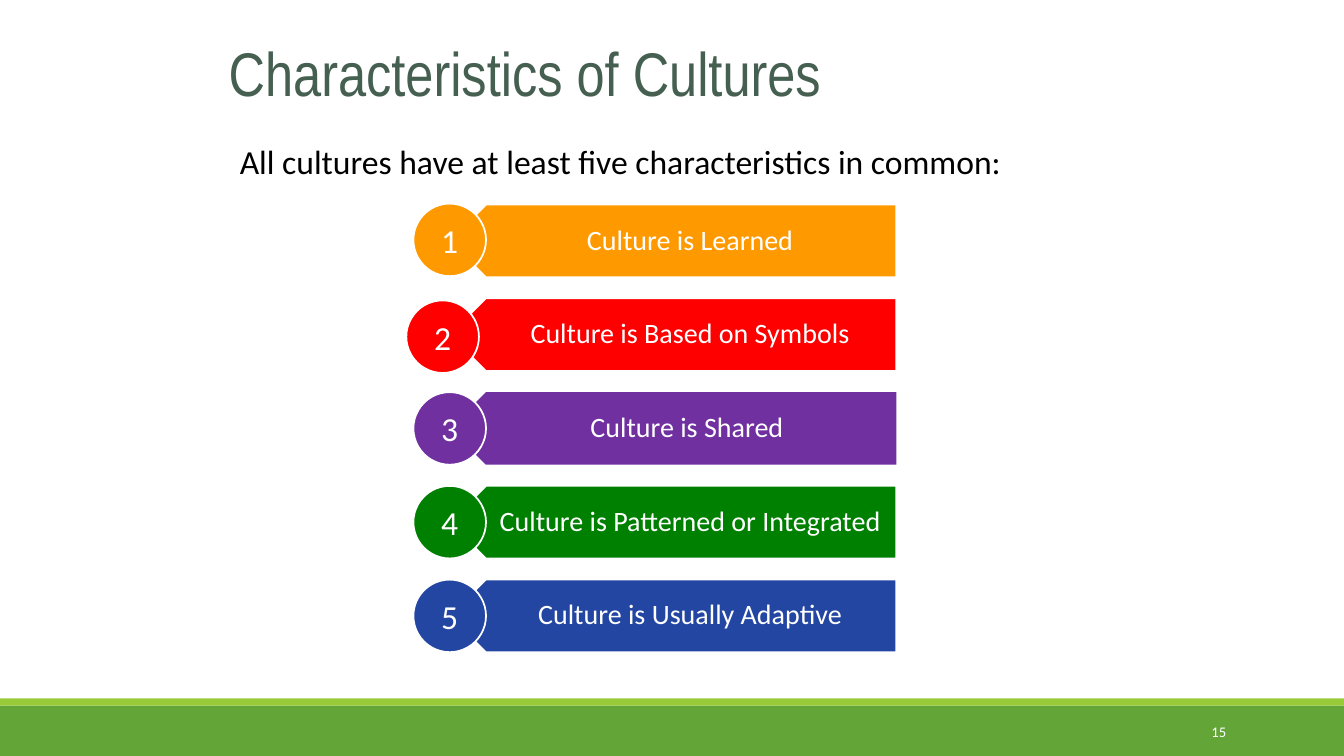
from pptx import Presentation
from pptx.dml.color import RGBColor
from pptx.enum.shapes import MSO_SHAPE
from pptx.enum.text import MSO_ANCHOR, PP_ALIGN
from pptx.util import Inches, Pt

COLORS = {
    "white": "FFFFFF", "black": "000000", "title": "455F51",
    "footer": "63A537", "stripe": "99CB38",
    "orange": "FF9900", "red": "FF0000", "purple": "7030A0",
    "green": "008000", "blue": "2446A3",
}


def paint(shape, fill, outlined):
    """Give a shape a flat fill, no shadow, and a white outline or none."""
    shape.shadow.inherit = False
    shape.fill.solid()
    shape.fill.fore_color.rgb = RGBColor.from_string(COLORS[fill])
    if outlined:
        shape.line.color.rgb = RGBColor.from_string(COLORS["white"])
        shape.line.width = Pt(1.25)
    else:
        shape.line.fill.background()


def write(shape, text, size, color="white", font="Calibri", align=PP_ALIGN.LEFT,
          anchor=MSO_ANCHOR.TOP, insets=(0.1, 0.05, 0.1, 0.05)):
    """Set one line of text; insets run left, top, right, bottom."""
    frame = shape.text_frame
    frame.word_wrap = True
    frame.vertical_anchor = anchor
    (frame.margin_left, frame.margin_top,
     frame.margin_right, frame.margin_bottom) = map(Inches, insets)
    para = frame.paragraphs[0]
    para.alignment = align
    span = para.add_run()
    span.text = text
    span.font.size = Pt(size)
    span.font.name = font
    span.font.color.rgb = RGBColor.from_string(COLORS[color])


deck = Presentation()
deck.slide_width, deck.slide_height = Inches(13.33), Inches(7.5)
page = deck.slides.add_slide(deck.slide_layouts[6])
shapes = page.shapes

# Footer bands and page number
for top, height, color in [(7, 0.5, "footer"), (6.93, 0.07, "stripe")]:
    band = shapes.add_shape(MSO_SHAPE.RECTANGLE, 0, Inches(top),
                            deck.slide_width, Inches(height))
    paint(band, color, outlined=False)

number_box = shapes.add_textbox(Inches(10.83), Inches(7.06), Inches(1.43), Inches(0.4))
write(number_box, "15", 10.5, align=PP_ALIGN.RIGHT, anchor=MSO_ANCHOR.MIDDLE)

# Heading and lead-in
title_box = shapes.add_textbox(Inches(2.17), Inches(0.3), Inches(9), Inches(0.88))
write(title_box, "Characteristics of Cultures", 44, "title", "Arial Narrow")

intro_box = shapes.add_textbox(Inches(2.28), Inches(1.35), Inches(8.64), Inches(0.5))
write(intro_box, "All cultures have at least five characteristics in common:", 24, "black")

# Numbered bars: text, color, circle left, circle shift from bar top, bar outlined
characteristics = [
    ("Culture is Learned", "orange", 4.1, -0.01, True),
    ("Culture is Based on Symbols", "red", 4.03, 0.02, True),
    ("Culture is Shared ", "purple", 4.1, 0, False),
    ("Culture is Patterned or Integrated", "green", 4.1, 0, True),
    ("Culture is Usually Adaptive", "blue", 4.1, 0, True),
]
FIRST_TOP, PITCH, SIZE = 2.03, 0.93, 0.72
TIP, SHOULDER, RIGHT = 4.46, 4.82, 8.89

for index, (text, color, circle_left, shift, outlined) in enumerate(characteristics):
    top = FIRST_TOP + index * PITCH
    middle, bottom = top + SIZE / 2, top + SIZE

    outline = shapes.build_freeform(Inches(RIGHT), Inches(bottom))
    corners = [(SHOULDER, bottom), (TIP, middle), (SHOULDER, top), (RIGHT, top)]
    outline.add_line_segments([(Inches(x), Inches(y)) for x, y in corners], close=True)
    bar = outline.convert_to_shape()
    paint(bar, color, outlined)
    write(bar, text, 20, align=PP_ALIGN.CENTER, anchor=MSO_ANCHOR.MIDDLE,
          insets=(0.48, 0.08, 0.14, 0.08))
    bar.text_frame.paragraphs[0].line_spacing = 0.9

    circle = shapes.add_shape(MSO_SHAPE.OVAL, Inches(circle_left), Inches(top + shift),
                              Inches(SIZE), Inches(SIZE))
    paint(circle, color, outlined=True)
    write(circle, str(index + 1), 24, align=PP_ALIGN.CENTER,
          anchor=MSO_ANCHOR.MIDDLE, insets=(0, 0, 0, 0))

deck.save("out.pptx")
